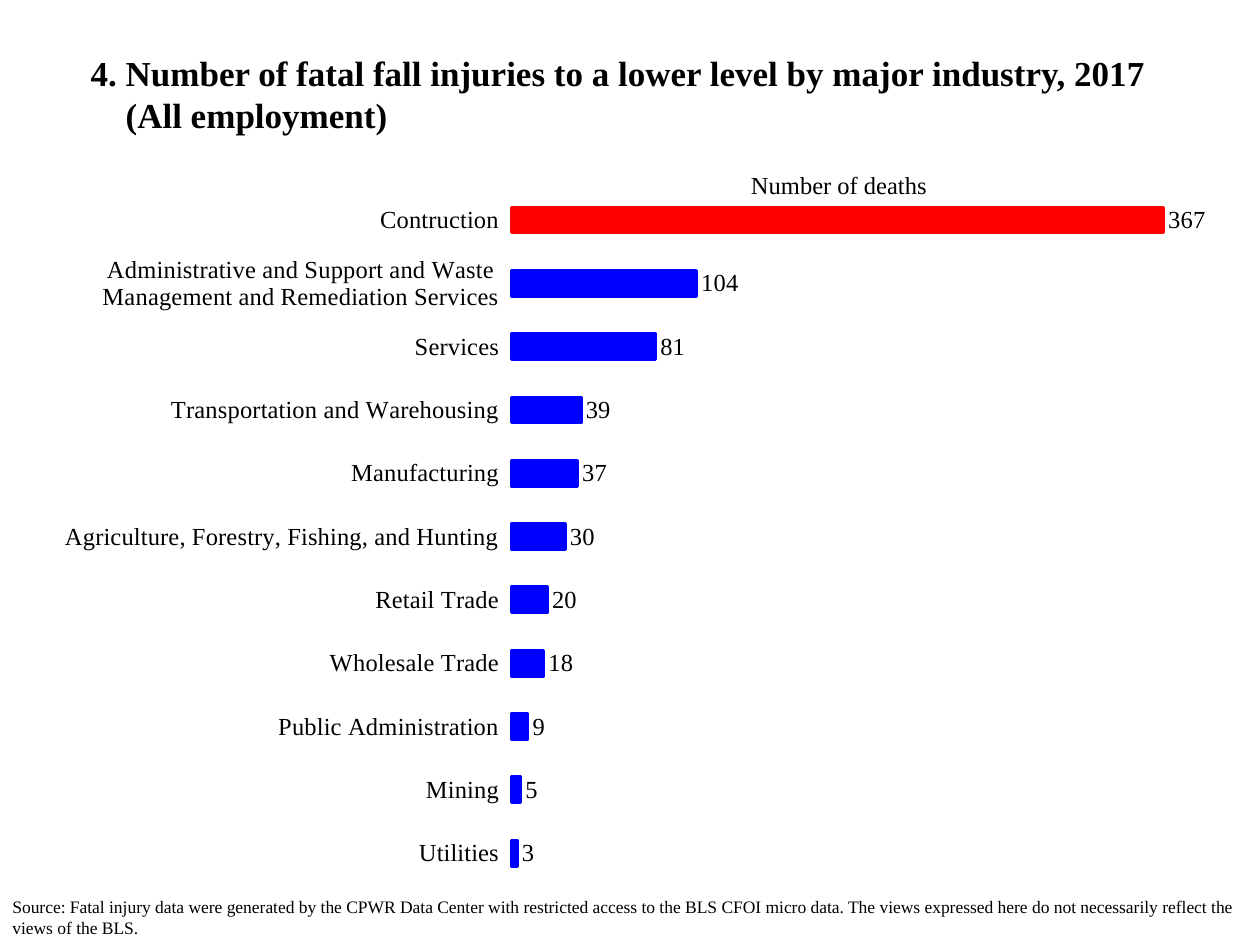
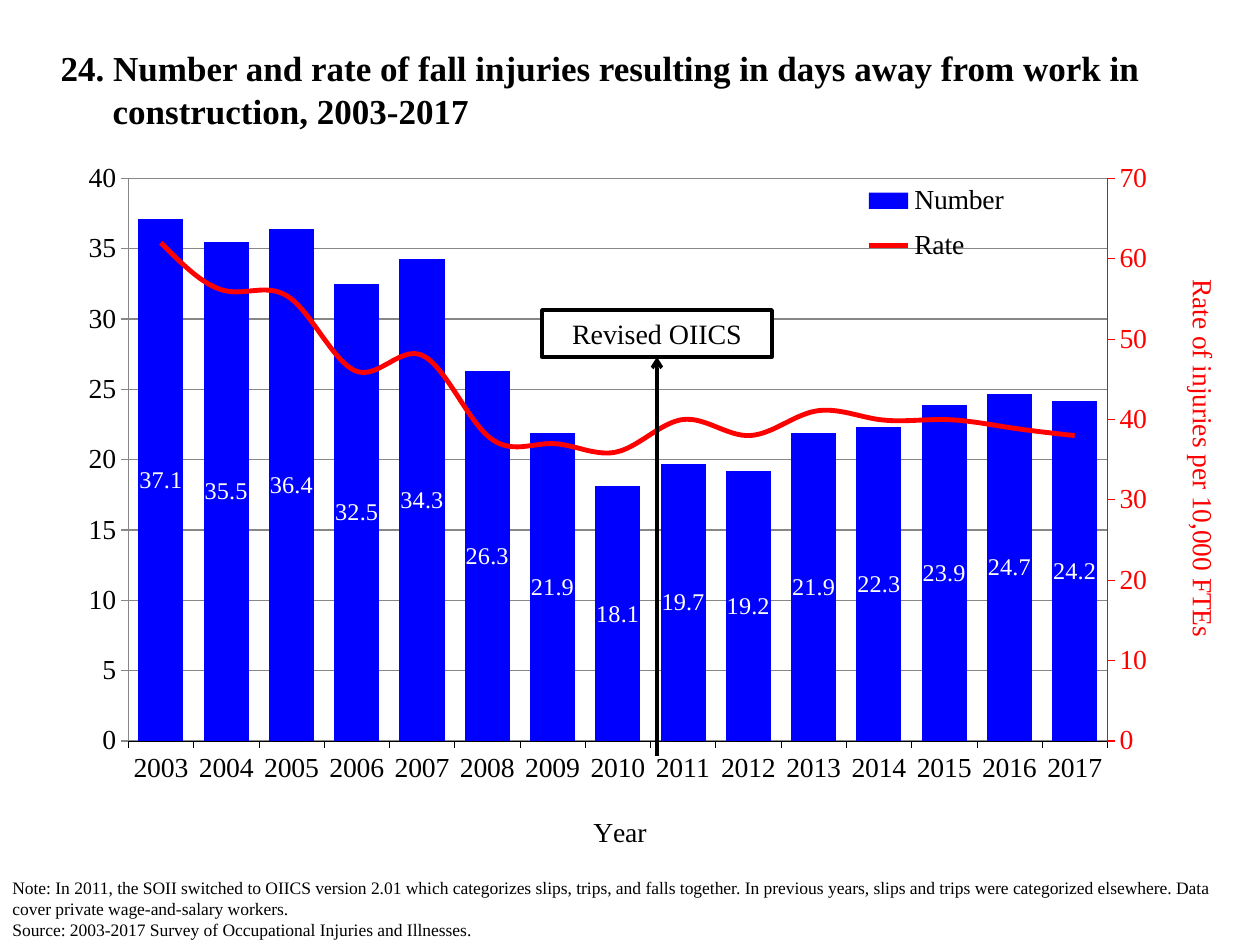
from copy import deepcopy

from lxml import etree
from pptx import Presentation
from pptx.chart.axis import ValueAxis
from pptx.chart.data import CategoryChartData
from pptx.dml.color import RGBColor
from pptx.enum.chart import (XL_CHART_TYPE, XL_LABEL_POSITION, XL_LEGEND_POSITION,
                             XL_MARKER_STYLE, XL_TICK_MARK)
from pptx.enum.shapes import MSO_CONNECTOR, MSO_SHAPE
from pptx.enum.text import MSO_ANCHOR, PP_ALIGN
from pptx.oxml import parse_xml
from pptx.oxml.ns import nsdecls, qn
from pptx.util import Emu, Pt

BAR, COLUMN = XL_CHART_TYPE.BAR_CLUSTERED, XL_CHART_TYPE.COLUMN_CLUSTERED
OUTSIDE_END, CENTERED = XL_LABEL_POSITION.OUTSIDE_END, XL_LABEL_POSITION.CENTER
TICK_OUT = XL_TICK_MARK.OUTSIDE
CORNER, NO_MARKER = XL_LEGEND_POSITION.CORNER, XL_MARKER_STYLE.NONE
RECTANGLE, STRAIGHT = MSO_SHAPE.RECTANGLE, MSO_CONNECTOR.STRAIGHT
LEFT, CENTER, MIDDLE = PP_ALIGN.LEFT, PP_ALIGN.CENTER, MSO_ANCHOR.MIDDLE

BLACK = RGBColor(0, 0, 0)
WHITE = RGBColor(255, 255, 255)
BLUE = RGBColor(0, 0, 255)
RED = RGBColor(255, 0, 0)
FONT = "Times New Roman"
PX_PER_INCH = 126
SLIDE_W, SLIDE_H = 1260, 945
TITLE_ONLY = 5

INDUSTRY_DEATHS = {
    "Contruction": 367,
    "Administrative and Support and Waste Management and Remediation Services": 104,
    "Services": 81,
    "Transportation and Warehousing": 39,
    "Manufacturing": 37,
    "Agriculture, Forestry, Fishing, and Hunting": 30,
    "Retail Trade": 20,
    "Wholesale Trade": 18,
    "Public Administration": 9,
    "Mining": 5,
    "Utilities": 3,
}
YEARS = [str(year) for year in range(2003, 2018)]
INJURIES = [37.1, 35.5, 36.4, 32.5, 34.3, 26.3, 21.9, 18.1,
            19.7, 19.2, 21.9, 22.3, 23.9, 24.7, 24.2]
RATES = [62, 56, 55, 46, 48, 38, 37, 36, 40, 38, 41, 40, 40, 39, 38]


def px(n):
    return Emu(round(n * 914400 / PX_PER_INCH))


def box(*lengths):
    return [px(n) for n in lengths]


def set_font(font, size, color=BLACK, bold=False):
    font.name, font.size, font.bold = FONT, Pt(size), bold
    font.color.rgb = color


def write(tf, text, size=10, color=BLACK, bold=False, align=LEFT, hanging=0):
    """Fill a text frame, one paragraph a line; hanging is an indent in px."""
    tf.word_wrap = True
    tf.text = text
    for p in tf.paragraphs:
        p.alignment = align
        if hanging:
            pPr = p._p.get_or_add_pPr()
            pPr.set("marL", str(px(hanging)))
            pPr.set("indent", str(-px(hanging)))
        for r in p.runs:
            set_font(r.font, size, color, bold)


def add_slide(prs, title, place, hanging):
    s = prs.slides.add_slide(prs.slide_layouts[TITLE_ONLY])
    sp = s.shapes.title
    sp.left, sp.top, sp.width, sp.height = box(*place)
    sp.text_frame.vertical_anchor = MIDDLE
    write(sp.text_frame, title, size=20, bold=True, hanging=hanging)
    return s


def add_text(s, text, place, **fmt):
    write(s.shapes.add_textbox(*box(*place)).text_frame, text, **fmt)


def add_label_box(s, text, place):
    sp = s.shapes.add_shape(RECTANGLE, *box(*place))
    sp.shadow.inherit = False
    sp.fill.solid()
    sp.fill.fore_color.rgb = WHITE
    sp.line.color.rgb = BLACK
    sp.line.width = Pt(2)
    sp.text_frame.vertical_anchor = MIDDLE
    write(sp.text_frame, text, size=16, align=CENTER)
    return sp


def add_arrow_to_bottom(s, target, start_y):
    """Draw a vertical arrow from start_y up to the bottom side of target."""
    x = target.left + target.width // 2
    line = s.shapes.add_connector(STRAIGHT, x, px(start_y), x, target.top + target.height)
    line.end_connect(target, 2)
    line.line.color.rgb = BLACK
    line.line.width = Pt(2)
    etree.SubElement(line.line._get_or_add_ln(), qn("a:tailEnd"), type="arrow")
    etree.SubElement(line._element.spPr, qn("a:effectLst"))


def set_layout(el, x, y, w=None, h=None, inner=False):
    """Place a chart part by fractions of the chart area."""
    for old in el.findall(qn("c:layout")):
        el.remove(old)
    layout = etree.Element(qn("c:layout"))
    manual = etree.SubElement(layout, qn("c:manualLayout"))
    values = {"layoutTarget": "inner" if inner else None, "xMode": "edge",
              "yMode": "edge", "x": x, "y": y, "w": w, "h": h}
    for tag, value in values.items():
        if value is not None:
            etree.SubElement(manual, qn("c:" + tag), val=str(value))
    overlay = el.find(qn("c:overlay"))
    if overlay is None:
        el.insert(0, layout)
    else:
        overlay.addprevious(layout)


def add_chart(s, kind, place, categories, series, gap, plot_layout):
    data = CategoryChartData()
    data.categories = categories
    for name, values in series.items():
        data.add_series(name, values)
    chart = s.shapes.add_chart(kind, *box(*place), data).chart
    chart.has_title = chart.has_legend = False
    set_font(chart.font, 16)
    plot = chart.plots[0]
    plot.gap_width = gap
    plot.vary_by_categories = False
    set_layout(chart._chartSpace.chart.plotArea, *plot_layout, inner=True)
    return chart


def fill_bars(target, color):
    target.format.fill.solid()
    target.format.fill.fore_color.rgb = color


def outline(target, color, width):
    target.format.line.color.rgb = color
    target.format.line.width = Pt(width)


def label_values(series, number_format, position, color=BLACK):
    labels = series.data_labels
    labels.show_value = True
    labels.number_format, labels.number_format_is_linked = number_format, False
    labels.position = position
    set_font(labels.font, 14, color)


def style_axis(axis, title, color, width, title_at, turn=0):
    """Format an axis; turn is the rotation of its title in degrees."""
    axis.major_tick_mark = TICK_OUT
    axis.has_major_gridlines = False
    set_font(axis.tick_labels.font, 16, color)
    outline(axis, color, width)
    tf = axis.axis_title.text_frame
    tf.text = title
    set_font(tf.paragraphs[0].runs[0].font, 16, color)
    tf._txBody.find(qn("a:bodyPr")).set("rot", str(turn * 60000))
    set_layout(axis.axis_title._element, *title_at)


def style_value_axis(axis, maximum, step, **fmt):
    axis.minimum_scale, axis.maximum_scale, axis.major_unit = 0, maximum, step
    axis.tick_labels.number_format = "#,##0"
    axis.tick_labels.number_format_is_linked = False
    style_axis(axis, **fmt)


def move_last_series_to_line(chart):
    """Turn the last series into a line on a second axis, and return both."""
    bars = chart.plots[0]._element
    cat_ax, val_ax = chart.category_axis._element, chart.value_axis._element
    ids = {cat_ax.find(qn("c:axId")).get("val"): "5001",
           val_ax.find(qn("c:axId")).get("val"): "5002"}
    line = parse_xml(f'<c:lineChart {nsdecls("c")}><c:grouping val="standard"/>'
                     '<c:varyColors val="0"/></c:lineChart>')
    ser = bars.findall(qn("c:ser"))[-1]
    for invert in ser.findall(qn("c:invertIfNegative")):
        ser.remove(invert)
    line.append(ser)
    etree.SubElement(line, qn("c:marker"), val="1")
    for axis_id in ids.values():
        etree.SubElement(line, qn("c:axId"), val=axis_id)
    bars.addnext(line)

    right_ax, hidden_ax = deepcopy(val_ax), deepcopy(cat_ax)
    for ax in (right_ax, hidden_ax):
        for tag in ("c:axId", "c:crossAx"):
            el = ax.find(qn(tag))
            el.set("val", ids[el.get("val")])
    right_ax.find(qn("c:axPos")).set("val", "r")
    right_ax.find(qn("c:crosses")).set("val", "max")
    hidden_ax.find(qn("c:delete")).set("val", "1")
    val_ax.addnext(right_ax)
    right_ax.addnext(hidden_ax)
    return chart.plots[1].series[0], ValueAxis(right_ax)


def build_industry_slide(prs):
    s = add_slide(prs, "4. Number of fatal fall injuries to a lower level by major "
                  "industry, 2017\v(All employment)", (78, 52, 1102, 84), hanging=35)
    chart = add_chart(s, BAR, (38, 144, 1184, 741), list(INDUSTRY_DEATHS),
                      {"Series 1": list(INDUSTRY_DEATHS.values())}, 150,
                      (0.4, 0.06, 0.6, 0.94))
    deaths = chart.plots[0].series[0]
    construction = deaths.points[0]
    for target, color in ((deaths, BLUE), (construction, RED)):
        fill_bars(target, color)
        outline(target, color, 2)
    label_values(deaths, "0", OUTSIDE_END)
    industries = chart.category_axis
    industries.reverse_order = True
    industries.major_tick_mark = TICK_OUT
    industries.format.line.fill.background()
    set_font(industries.tick_labels.font, 14)
    chart.value_axis.visible = False
    chart.value_axis.has_major_gridlines = False
    chart.value_axis.minimum_scale, chart.value_axis.maximum_scale = 0, 400
    add_text(s, "Number of deaths", (719, 164, 240, 40), size=14, align=CENTER)
    add_text(s, "Source: Fatal injury data were generated by the CPWR Data Center with "
             "restricted access to the BLS CFOI micro data. The views expressed here do "
             "not necessarily reflect the views of the BLS.", (0, 890, SLIDE_W, 55))


def build_trend_slide(prs):
    s = add_slide(prs, "24. Number and rate of fall injuries resulting in days away from "
                  "work in\vconstruction, 2003-2017", (48, 42, 1166, 94), hanging=52)
    chart = add_chart(s, COLUMN, (34, 158, 1192, 699), YEARS,
                      {"Number": INJURIES, "Rate": RATES}, 45, (0.08, 0.03, 0.83, 0.82))
    rate, rate_axis = move_last_series_to_line(chart)
    number = chart.plots[0].series[0]
    fill_bars(number, BLUE)
    label_values(number, "#,##0.0", CENTERED, WHITE)
    outline(rate, RED, 2.82)
    rate.smooth = True
    rate.marker.style = NO_MARKER
    style_axis(chart.category_axis, "Year", BLACK, 0.25, (0.47, 0.95))
    style_value_axis(chart.value_axis, 40, 5, title="Number of injuries (in thousands)",
                     color=BLUE, width=0.94, title_at=(0.01, 0.17), turn=-90)
    style_value_axis(rate_axis, 70, 10, title="Rate of injuries per 10,000 FTEs",
                     color=RED, width=0.75, title_at=(0.97, 0.17), turn=90)
    chart.has_legend = True
    chart.legend.position = CORNER
    chart.legend.include_in_layout = False
    set_font(chart.legend.font, 16)
    set_layout(chart.legend._element, 0.69, 0.02, 0.15, 0.15)
    revision = add_label_box(s, "Revised OIICS", (542, 310, 230, 47))
    add_arrow_to_bottom(s, revision, 756)
    add_text(s, "Note: In 2011, the SOII switched to OIICS version 2.01 which categorizes "
             "slips, trips, and falls together. In previous years, slips and trips were "
             "categorized elsewhere. Data cover private wage-and-salary workers.\n"
             "Source: 2003-2017 Survey of Occupational Injuries and Illnesses.",
             (0, 871, SLIDE_W, 74))


def main():
    prs = Presentation()
    prs.slide_width, prs.slide_height = box(SLIDE_W, SLIDE_H)
    build_industry_slide(prs)
    build_trend_slide(prs)
    prs.save("out.pptx")


if __name__ == "__main__":
    main()
